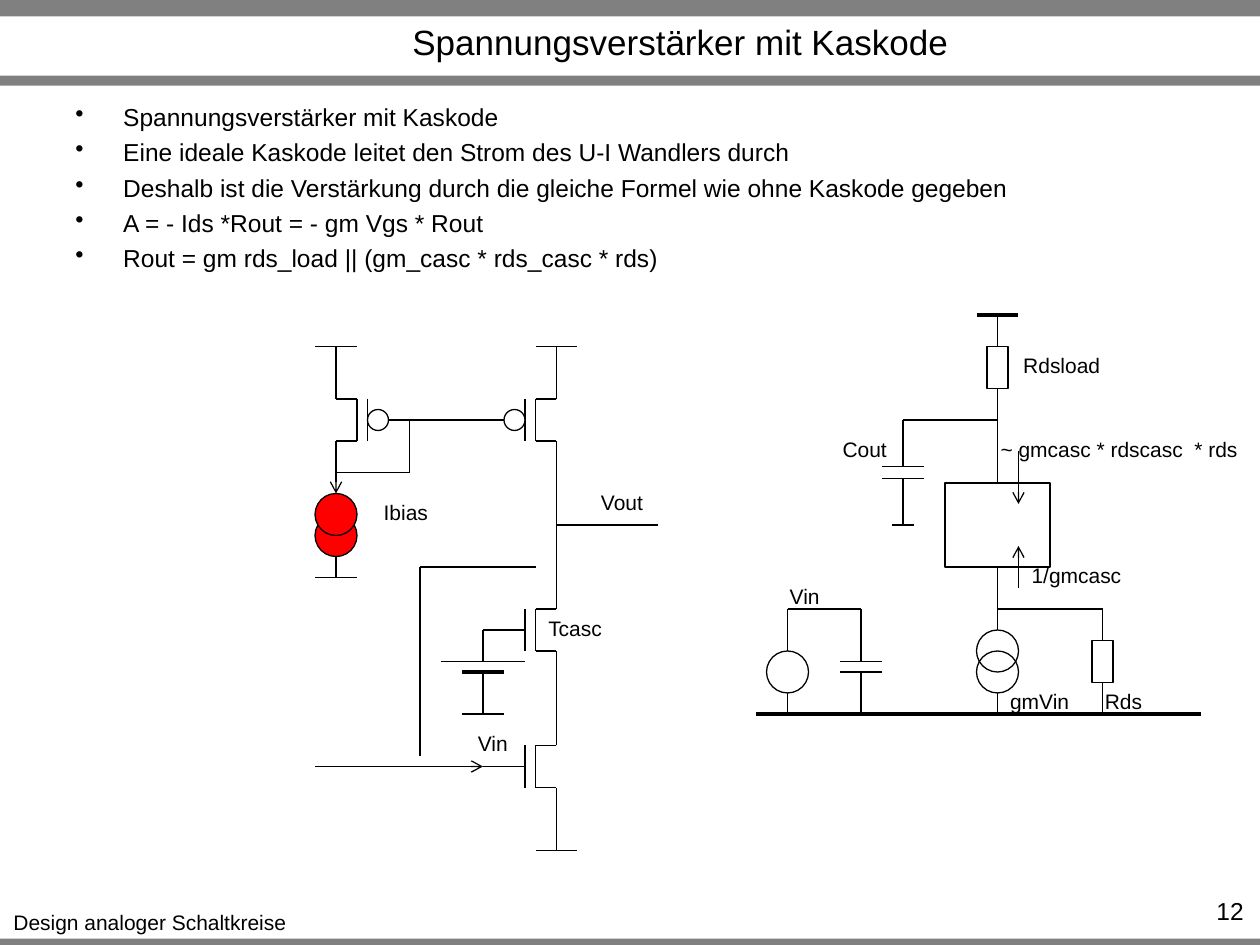
from lxml import etree
from pptx import Presentation
from pptx import util as u
from pptx.dml.color import RGBColor
from pptx.enum import shapes, text
from pptx.oxml.ns import qn

BLACK = RGBColor(0, 0, 0)
WHITE = RGBColor(255, 255, 255)
GRAY = RGBColor(128, 128, 128)
RED = RGBColor(255, 0, 0)

FONT = "Arial"
WIDTH, HEIGHT = 10, 7.5
CELLS_PER_INCH = 12
THIN, THICK, BATTERY = 0.75, 1.75, 2
LABEL_HEIGHT = 0.3
LEFT, CENTER, RIGHT = text.PP_ALIGN.LEFT, text.PP_ALIGN.CENTER, text.PP_ALIGN.RIGHT
OVAL, BOX = shapes.MSO_SHAPE.OVAL, shapes.MSO_SHAPE.RECTANGLE

TITLE = "Spannungsverstärker mit Kaskode"
BULLETS = [
    "Spannungsverstärker mit Kaskode",
    "Eine ideale Kaskode leitet den Strom des U-I Wandlers durch",
    "Deshalb ist die Verstärkung durch die gleiche Formel wie ohne Kaskode gegeben",
    "A = - Ids *Rout = - gm Vgs * Rout",
    "Rout = gm rds_load || (gm_casc * rds_casc * rds)",
]
FOOTER = "Design analoger Schaltkreise"
PAGE = "12"
BARS = [(0, 0.13), (0.6, 0.08), (7.45, 0.08)]

TRANSISTORS = [(32, 40, 1), (53, 40, -1), (53, 60, -1), (53, 73, -1)]

AMPLIFIER_WIRES = [
    [(30, 33), (34, 33)], [(32, 33), (32, 35)],
    [(51, 33), (55, 33)], [(53, 33), (53, 35)],
    [(35, 40), (50, 40)], [(32, 45), (39, 45), (39, 40)],
    [(53, 45), (53, 55)], [(53, 50), (62.64, 50)],
    [(51, 54), (40, 54), (40, 72)],
    [(50, 60), (46, 60), (46, 63)], [(42, 63), (50, 63)],
    [(46, 64), (46, 68)], [(44, 68), (48, 68)],
    [(53, 65), (53, 68)], [(46, 73), (50, 73)],
    [(53, 78), (53, 81)], [(51, 81), (55, 81)],
    [(32, 53), (32, 55)], [(30, 55), (34, 55)],
]
MODEL_WIRES = [
    [(95, 30), (95, 33)], [(95, 37), (95, 46)],
    [(95, 40), (86, 40), (86, 44.4)],
    [(84, 44.4), (88, 44.4)], [(84, 45.6), (88, 45.6)],
    [(86, 45.6), (86, 50)], [(85, 50), (87, 50)],
    [(95, 54), (95, 60)], [(95, 66), (95, 68)],
    [(95, 58), (105, 58), (105, 61)], [(105, 65), (105, 68)],
    [(75, 62), (75, 58), (82, 58), (82, 63)], [(75, 66), (75, 68)],
    [(80, 63), (84, 63)], [(80, 64), (84, 64)], [(82, 64), (82, 68)],
]
HEAVY_WIRES = [
    ([(44, 64), (48, 64)], BATTERY),
    ([(93, 30), (97, 30)], THICK),
    ([(72, 68), (114.4, 68)], THICK),
]
ARROWS = [
    [(32, 42), (32, 47)], [(30, 73), (46, 73)],
    [(97, 56), (97, 52)], [(97, 43), (97, 48)],
]
SYMBOLS = [
    (OVAL, 35, 39, 2, 2, WHITE), (OVAL, 48, 39, 2, 2, WHITE),
    (OVAL, 30, 49, 4, 4, RED), (OVAL, 30, 47, 4, 4, RED),
    (OVAL, 93, 60, 4, 4, None), (OVAL, 93, 62, 4, 4, None),
    (OVAL, 73, 62, 4, 4, None),
    (BOX, 94, 33, 2, 4, None), (BOX, 104, 61, 2, 4, None),
    (BOX, 90, 46, 10, 8, None),
]
LABELS = [
    ("Tcasc", 51, 58, 0.63), ("Ibias", 35.3, 47, 0.56),
    ("Vin", 44.3, 69, 0.44), ("Vout", 56, 46, 0.54),
    ("Rdsload", 96.2, 33, 0.82), ("Cout", 79, 41, 0.56),
    ("~ gmcasc * rdscasc  * rds", 94, 41, 2.1),
    ("1/gmcasc", 97, 53, 0.92), ("Vin", 74, 55, 0.44),
    ("gmVin", 95, 65, 0.67), ("Rds", 104, 65, 0.5),
]


def grid(cells):
    return u.Inches(cells / CELLS_PER_INCH)


def format_paragraph(paragraph, content, size=12, align=LEFT):
    paragraph.text = content
    paragraph.alignment = align
    paragraph.font.name = FONT
    paragraph.font.size = u.Pt(size)
    paragraph.font.color.rgb = BLACK


def add_text(slide, content, left, top, width, height=LABEL_HEIGHT, wrap=False, **style):
    box = slide.shapes.add_textbox(*map(u.Inches, (left, top, width, height)))
    box.text_frame.word_wrap = wrap
    format_paragraph(box.text_frame.paragraphs[0], content, **style)


def add_bullets(slide):
    box = slide.shapes.add_textbox(*map(u.Inches, (0.5, 0.76, 9, 1.5)))
    frame = box.text_frame
    frame.word_wrap = True
    for index, content in enumerate(BULLETS):
        paragraph = frame.add_paragraph() if index else frame.paragraphs[0]
        properties = paragraph._p.get_or_add_pPr()
        properties.set("marL", str(u.Inches(0.38)))
        properties.set("indent", str(u.Inches(-0.38)))
        etree.SubElement(properties, qn("a:buChar")).set("char", "•")
        format_paragraph(paragraph, content, size=14)
        if index:
            paragraph.space_before = u.Pt(3.4)


def add_shape(slide, kind, bounds, fill=None, line=None):
    shape = slide.shapes.add_shape(kind, *bounds)
    shape.shadow.inherit = False
    if fill is None:
        shape.fill.background()
    else:
        shape.fill.solid()
        shape.fill.fore_color.rgb = fill
    if line is None:
        shape.line.fill.background()
    else:
        shape.line.color.rgb = line
        shape.line.width = u.Pt(THIN)


def add_wire(slide, points, width=THIN, arrow=False):
    for start, end in zip(points, points[1:]):
        wire = slide.shapes.add_connector(
            shapes.MSO_CONNECTOR.STRAIGHT, *map(grid, (*start, *end)))
        wire.line.color.rgb = BLACK
        wire.line.width = u.Pt(width)
        if arrow:
            etree.SubElement(wire.line._get_or_add_ln(), qn("a:tailEnd")).set("type", "arrow")
        etree.SubElement(wire._element.spPr, qn("a:effectLst"))


def add_transistor(slide, x, y, side):
    channel, gate = x + 2 * side, x + 3 * side
    add_wire(slide, [(x, y - 5), (x, y - 2), (channel, y - 2),
                     (channel, y + 2), (x, y + 2), (x, y + 5)])
    add_wire(slide, [(gate, y - 2), (gate, y + 2)])


def main():
    presentation = Presentation()
    presentation.slide_width = u.Inches(WIDTH)
    presentation.slide_height = u.Inches(HEIGHT)
    slide = presentation.slides.add_slide(presentation.slide_layouts[5])

    for top, height in BARS:
        add_shape(slide, BOX, list(map(u.Inches, (0, top, WIDTH, height))), fill=GRAY)

    title = slide.shapes.title
    title.left, title.top, title.width, title.height = map(u.Inches, (1.3, 0.14, 8.2, 0.38))
    title.text_frame.auto_size = text.MSO_AUTO_SIZE.NONE
    title.text_frame.vertical_anchor = text.MSO_ANCHOR.MIDDLE
    format_paragraph(title.text_frame.paragraphs[0], TITLE, size=20, align=CENTER)

    add_bullets(slide)
    add_text(slide, FOOTER, 0, 7.17, 2.38, align=CENTER)
    add_text(slide, PAGE, 9.1, 7.06, 0.87, wrap=True, size=14, align=RIGHT)

    for transistor in TRANSISTORS:
        add_transistor(slide, *transistor)
    for points in AMPLIFIER_WIRES + MODEL_WIRES:
        add_wire(slide, points)
    for points, width in HEAVY_WIRES:
        add_wire(slide, points, width=width)
    for kind, *bounds, fill in SYMBOLS:
        add_shape(slide, kind, list(map(grid, bounds)), fill=fill, line=BLACK)
    for points in ARROWS:
        add_wire(slide, points, arrow=True)
    for content, column, row, width in LABELS:
        add_text(slide, content, column / CELLS_PER_INCH, row / CELLS_PER_INCH,
                 width, align=CENTER)

    presentation.save("out.pptx")


if __name__ == "__main__":
    main()
